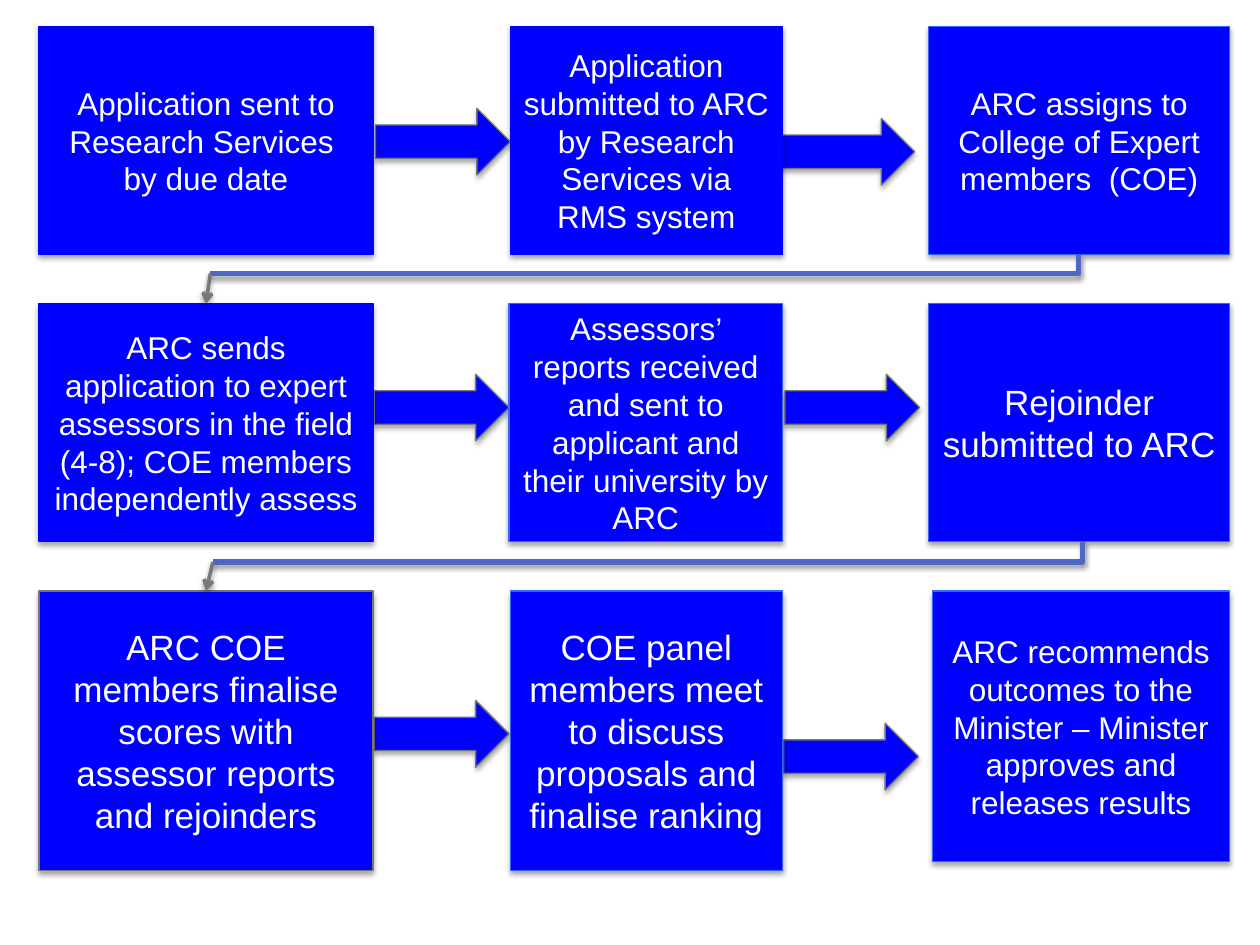
from dataclasses import dataclass

from pptx import Presentation
from pptx.dml.color import RGBColor
from pptx.enum.shapes import MSO_CONNECTOR as Connector, MSO_SHAPE as Shape
from pptx.enum.text import MSO_ANCHOR as Anchor, PP_ALIGN as Align
from pptx.oxml import parse_xml
from pptx.oxml.ns import nsdecls, qn
from pptx.util import Inches, Pt


@dataclass(frozen=True)
class Theme:
    font: str = "Arial"
    fill: str = "0000FF"
    text: str = "FFFFFF"
    edge_plain: str = "0000FF"
    edge_light: str = "3366FF"
    edge_gray: str = "747574"
    elbow: str = "4E67C8"
    pointer: str = "777877"
    small: int = 18
    large: int = 20
    edge_width: float = 0.75
    elbow_width: float = 3
    pointer_width: float = 2


THEME = Theme()


@dataclass(frozen=True)
class Step:
    text: str
    left: float
    top: float
    width: float
    height: float
    edge: str = THEME.edge_light
    size: int = THEME.small


@dataclass(frozen=True)
class RowLink:
    start: tuple[float, float]
    corner_y: float
    end_x: float
    target: int  # index of the step the link leads to


COLUMN_1, COLUMN_2, COLUMN_3 = 0.31, 4.05, 7.37
WIDTH_1, WIDTH_2, WIDTH_3 = 2.65, 2.16, 2.39
ROW_1, ROW_2, ROW_3 = 0.21, 2.41, 4.69
HEIGHT_1, HEIGHT_2, HEIGHT_3 = 1.81, 1.89, 2.22
ARROW_WIDTH, ARROW_HEIGHT = 1.07, 0.53

STEPS = [
    Step("Application sent to Research Services  by due date",
         COLUMN_1, ROW_1, WIDTH_1, HEIGHT_1, THEME.edge_plain),
    Step("Application submitted to ARC by Research Services via RMS system",
         COLUMN_2, ROW_1, WIDTH_2, HEIGHT_1, THEME.edge_plain),
    Step("ARC assigns to College of Expert members  (COE)",
         COLUMN_3, ROW_1, WIDTH_3, HEIGHT_1),
    Step("ARC sends application to expert assessors in the field (4-8); "
         "COE members independently assess",
         COLUMN_1, ROW_2, WIDTH_1, HEIGHT_2, THEME.edge_plain),
    Step("Assessors’ reports received and sent to applicant and their university by ARC",
         4.04, ROW_2, 2.17, HEIGHT_2),
    Step("Rejoinder submitted to ARC",
         COLUMN_3, ROW_2, WIDTH_3, HEIGHT_2, size=THEME.large),
    Step("ARC COE members finalise scores with assessor reports and rejoinders",
         COLUMN_1, ROW_3, WIDTH_1, HEIGHT_3, THEME.edge_gray, THEME.large),
    Step("COE panel members meet to discuss proposals and finalise ranking",
         COLUMN_2, ROW_3, WIDTH_2, HEIGHT_3, size=THEME.large),
    Step("ARC recommends outcomes to the Minister – Minister approves and releases results",
         7.4, ROW_3, 2.36, 2.15),
]
ARROWS = [(2.98, 0.86), (6.19, 0.94), (2.97, 2.97),
          (6.23, 2.97), (2.97, 5.56), (6.22, 5.74)]
ROW_LINKS = [RowLink((8.56, 2.02), 2.17, 1.67, 3),
             RowLink((8.59, 4.3), 4.46, 1.69, 6)]


def add_shadow(item, distance: float, opacity: int) -> None:
    """Give a shape or connector a soft shadow straight below it."""
    item._element.spPr.append(parse_xml(
        f'<a:effectLst {nsdecls("a")}>'
        f'<a:outerShdw blurRad="{Pt(3.1)}" dist="{Pt(distance)}" dir="5400000" rotWithShape="0">'
        f'<a:srgbClr val="000000"><a:alpha val="{opacity * 1000}"/></a:srgbClr>'
        '</a:outerShdw></a:effectLst>'))


def style_line(line, color: str, width: float) -> None:
    line.color.rgb = RGBColor.from_string(color)
    line.width = Pt(width)


def add_block(page, kind, left: float, top: float, width: float, height: float, edge: str):
    block = page.shapes.add_shape(kind, Inches(left), Inches(top), Inches(width), Inches(height))
    block.fill.solid()
    block.fill.fore_color.rgb = RGBColor.from_string(THEME.fill)
    style_line(block.line, edge, THEME.edge_width)
    add_shadow(block, distance=1.8, opacity=35)
    return block


def write_text(box, text: str, *, size: int, color: str = THEME.text) -> None:
    frame = box.text_frame
    frame.word_wrap = True
    frame.vertical_anchor = Anchor.MIDDLE
    para = frame.paragraphs[0]
    para.alignment = Align.CENTER
    span = para.add_run()
    span.text = text
    span.font.name = THEME.font
    span.font.size = Pt(size)
    span.font.color.rgb = RGBColor.from_string(color)


def add_step(page, step: Step):
    box = add_block(page, Shape.RECTANGLE, step.left, step.top, step.width, step.height, step.edge)
    write_text(box, step.text, size=step.size)
    return box


def add_elbow(page, link: RowLink) -> None:
    """Run down from the start, then left: a one-bend connector turned by 90 degrees."""
    start_x, start_y = link.start
    drop, run = link.corner_y - start_y, start_x - link.end_x
    left = (start_x + link.end_x - drop) / 2
    top = (start_y + link.corner_y - run) / 2
    elbow = page.shapes.add_connector(Connector.ELBOW, Inches(left), Inches(top),
                                      Inches(left + drop), Inches(top + run))
    properties = elbow._element.spPr
    properties.find(qn("a:xfrm")).set("rot", "5400000")
    properties.find(qn("a:prstGeom")).set("prst", "bentConnector2")
    style_line(elbow.line, THEME.elbow, THEME.elbow_width)
    add_shadow(elbow, distance=1.6, opacity=38)


def add_pointer(page, link: RowLink, target) -> None:
    pointer = page.shapes.add_connector(Connector.STRAIGHT, Inches(link.end_x),
                                        Inches(link.corner_y), target.left, target.top)
    pointer.end_connect(target, 0)
    style_line(pointer.line, THEME.pointer, THEME.pointer_width)
    pointer.line._get_or_add_ln().append(parse_xml(f'<a:tailEnd {nsdecls("a")} type="arrow"/>'))
    add_shadow(pointer, distance=1.6, opacity=38)


def main() -> None:
    deck = Presentation()
    deck.slide_width, deck.slide_height = Inches(10), Inches(7.5)
    page = deck.slides.add_slide(deck.slide_layouts[6])

    # Block arrows between the steps of a row
    for left, top in ARROWS:
        add_block(page, Shape.RIGHT_ARROW, left, top, ARROW_WIDTH, ARROW_HEIGHT, THEME.edge_gray)

    # Process steps
    boxes = [add_step(page, step) for step in STEPS]

    # Links from the end of one row to the start of the next
    for link in ROW_LINKS:
        add_elbow(page, link)
        add_pointer(page, link, boxes[link.target])

    deck.save("out.pptx")


if __name__ == "__main__":
    main()
